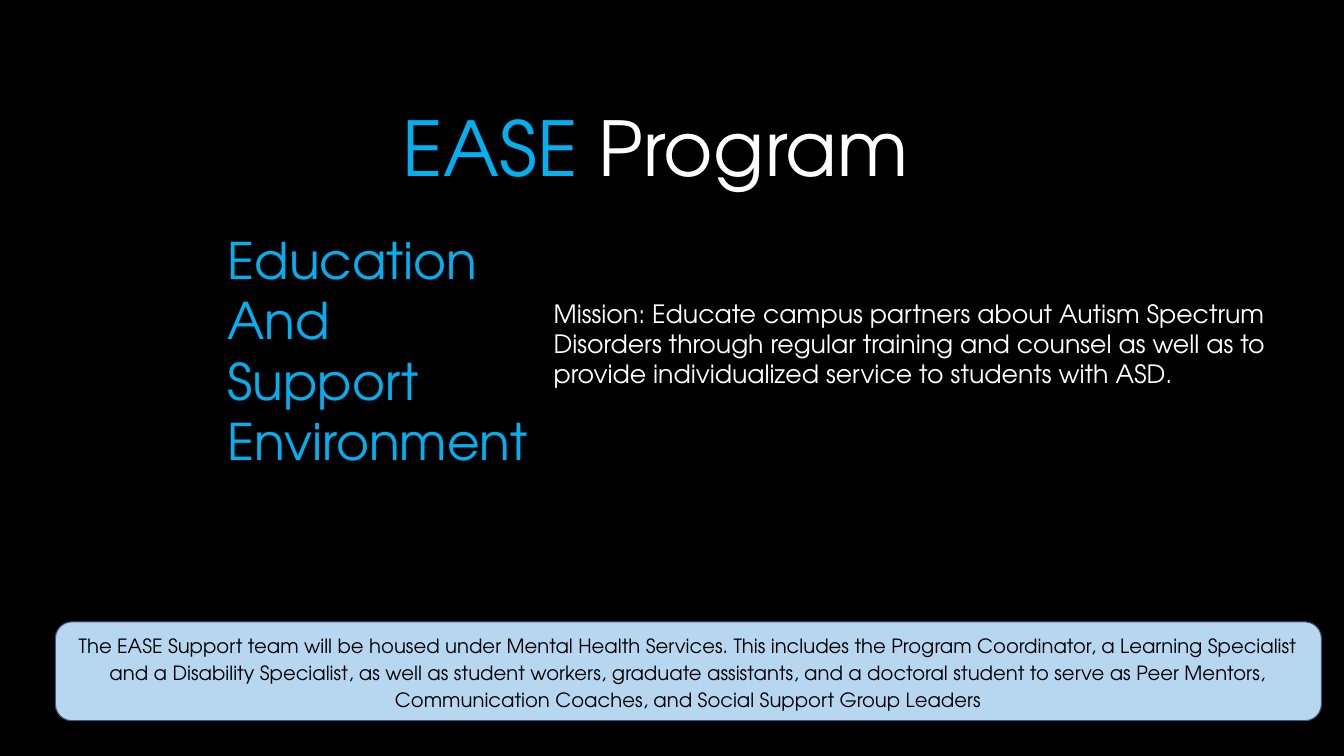
"""Builds the EASE Program slide."""
import pptx
import pptx.dml.color
import pptx.enum.shapes
import pptx.enum.text
import pptx.util

Pt = pptx.util.Pt
RGBColor = pptx.dml.color.RGBColor
MSO_SHAPE = pptx.enum.shapes.MSO_SHAPE
PP_ALIGN = pptx.enum.text.PP_ALIGN
MSO_ANCHOR = pptx.enum.text.MSO_ANCHOR
MSO_AUTO_SIZE = pptx.enum.text.MSO_AUTO_SIZE

BLACK = RGBColor(0x00, 0x00, 0x00)
WHITE = RGBColor(0xFF, 0xFF, 0xFF)
BRIGHT_BLUE = RGBColor(0x00, 0xB0, 0xF0)
PALE_BLUE = RGBColor(0xB7, 0xD7, 0xF1)
EDGE_BLUE = RGBColor(0x41, 0x55, 0x88)


class ProgramSlide:
    FONT = "TeX Gyre Adventor"

    def __init__(self, deck):
        self.slide = deck.slides.add_slide(deck.slide_layouts[5])
        fill = self.slide.background.fill
        fill.solid()
        fill.fore_color.rgb = BLACK

    def style_run(self, run, size, color):
        run.font.name = self.FONT
        run.font.size = Pt(size)
        run.font.color.rgb = color

    def style_text(self, shape, text, size, color, align, anchor, spacing=1.0):
        frame = shape.text_frame
        frame.text = text
        frame.word_wrap = True
        frame.auto_size = MSO_AUTO_SIZE.NONE
        frame.vertical_anchor = anchor
        for paragraph in frame.paragraphs:
            paragraph.alignment = align
            paragraph.line_spacing = spacing
            for run in paragraph.runs:
                self.style_run(run, size, color)

    def title(self, box, parts, size):
        heading = self.slide.shapes.title
        heading.left, heading.top, heading.width, heading.height = map(Pt, box)
        self.style_text(heading, "", size, WHITE, PP_ALIGN.CENTER, MSO_ANCHOR.MIDDLE)
        for text, color in parts:
            run = heading.text_frame.paragraphs[0].add_run()
            run.text = text
            self.style_run(run, size, color)

    def text(self, box, text, size, color):
        words = self.slide.shapes.add_textbox(*map(Pt, box))
        self.style_text(words, text, size, color, PP_ALIGN.LEFT, MSO_ANCHOR.TOP)

    def panel(self, kind, box, fill, text, size, color, align, spacing=1.0, edge=None):
        panel = self.slide.shapes.add_shape(kind, *map(Pt, box))
        panel.shadow.inherit = False
        panel.fill.solid()
        panel.fill.fore_color.rgb = fill
        if edge is None:
            panel.line.fill.background()
        else:
            panel.line.color.rgb = edge
            panel.line.width = Pt(0.75)
        self.style_text(panel, text, size, color, align, MSO_ANCHOR.MIDDLE, spacing)


def main():
    deck = pptx.Presentation()
    deck.slide_width, deck.slide_height = Pt(960), Pt(540)
    program = ProgramSlide(deck)
    program.title((198, 68.4, 540.7, 72.7),
                  [("EASE", BRIGHT_BLUE), (" Program", WHITE)], 54)
    program.panel(
        MSO_SHAPE.FLOWCHART_ALTERNATE_PROCESS, (39.6, 444.2, 904.3, 70.6), PALE_BLUE,
        "The EASE Support team will be housed under Mental Health Services. "
        "This includes the Program Coordinator, a Learning Specialist and a "
        "Disability Specialist, as well as student workers, graduate assistants, "
        "and a doctoral student to serve as Peer Mentors, Communication Coaches, "
        "and Social Support Group Leaders",
        14, BLACK, PP_ALIGN.CENTER, spacing=1.15, edge=EDGE_BLUE)
    program.text((155.5, 159.8, 238.3, 181.4),
                 "Education\nAnd\nSupport\nEnvironment", 36, BRIGHT_BLUE)
    program.panel(
        MSO_SHAPE.ROUNDED_RECTANGLE, (384.5, 205.2, 548.6, 80.6), BLACK,
        "Mission: Educate campus partners about Autism Spectrum Disorders through "
        "regular training and counsel as well as to provide individualized service "
        "to students with ASD.",
        18, WHITE, PP_ALIGN.LEFT)
    deck.save("out.pptx")


if __name__ == "__main__":
    main()
